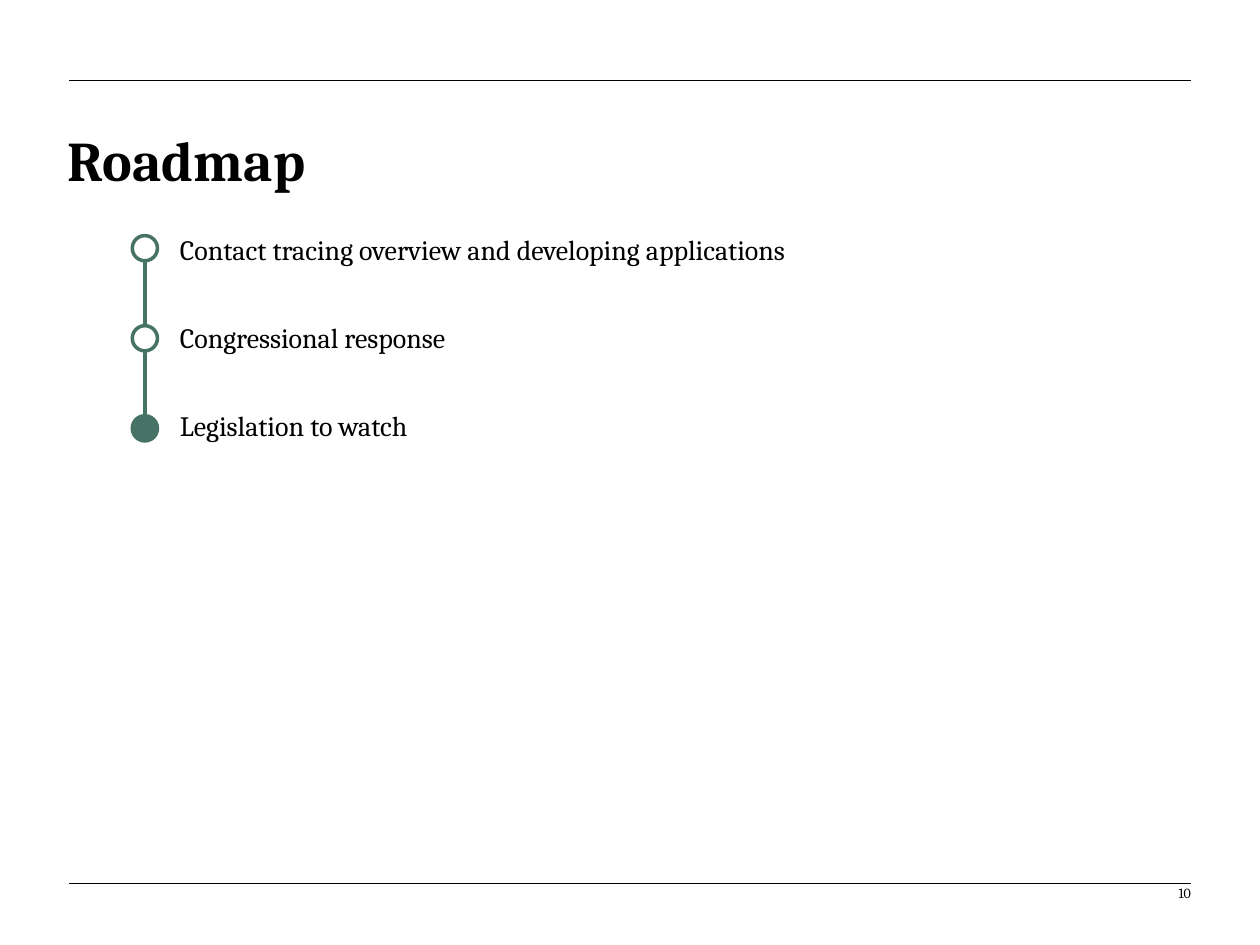
from lxml.etree import SubElement
from pptx import Presentation
from pptx.dml.color import RGBColor
from pptx.enum.shapes import MSO_CONNECTOR as CONNECTOR, MSO_SHAPE as SHAPE
from pptx.enum.text import MSO_ANCHOR as ANCHOR, PP_ALIGN as ALIGN
from pptx.oxml.ns import qn
from pptx.util import Inches, Pt

WIDTH, HEIGHT = 10, 7.5
MARGIN = 0.055 * WIDTH
BLACK = RGBColor(0x00, 0x00, 0x00)
WHITE = RGBColor(0xFF, 0xFF, 0xFF)
GREEN = RGBColor(0x47, 0x73, 0x67)
STOPS = [
    "Contact tracing overview and developing applications",
    "Congressional response",
    "Legislation to watch",
]
CURRENT = "Legislation to watch"


def add_line(slide, start, end, color, weight):
    points = [Inches(value) for value in (*start, *end)]
    line = slide.shapes.add_connector(CONNECTOR.STRAIGHT, *points)
    line.line.color.rgb = color
    line.line.width = Pt(weight)
    SubElement(line._element.spPr, qn("a:effectLst"))


def add_shape(slide, kind, box, fill):
    shape = slide.shapes.add_shape(kind, *[Inches(value) for value in box])
    shape.shadow.inherit = False
    shape.fill.solid()
    shape.fill.fore_color.rgb = fill
    return shape


def write(frame, lines, size, bold=False, align=ALIGN.LEFT, anchor=ANCHOR.TOP, gap=0):
    frame.word_wrap = True
    frame.vertical_anchor = anchor
    style = {"name": "Cambria", "size": Pt(size), "bold": bold}
    for index, line in enumerate(lines):
        paragraph = frame.paragraphs[0] if index == 0 else frame.add_paragraph()
        paragraph.text = line
        paragraph.alignment = align
        paragraph.space_after = Pt(gap)
        for key, value in style.items():
            setattr(paragraph.font, key, value)
        paragraph.font.color.rgb = BLACK


def add_label(slide, box, text, size, **layout):
    label = slide.shapes.add_textbox(*[Inches(value) for value in box])
    write(label.text_frame, [text], size, **layout)


def add_frame(slide, left, right, top, bottom, number):
    # Rules across the page, with the page number under the lower one
    for y in (bottom, top):
        add_line(slide, (left, y), (right, y), BLACK, 0.5)
    width = 2.49
    add_label(slide, (right + 0.1 - width, bottom - 0.12, width, 0.4), number, 8,
              align=ALIGN.RIGHT, anchor=ANCHOR.MIDDLE)


def add_roadmap(slide, left, top, width, height):
    dot, first, pitch = 0.2, top + 0.07, 0.715
    center = left + dot / 2
    last = first + pitch * (len(STOPS) - 1)

    # Track behind the stops
    add_line(slide, (center, last + dot), (center, first + dot), GREEN, 2.25)

    # Stop names
    text_left = left + 0.28
    names = add_shape(slide, SHAPE.RECTANGLE,
                      (text_left, top, left + width - text_left, height), WHITE)
    names.line.fill.background()
    write(names.text_frame, STOPS, 16, gap=31)

    # Stops, with the current one filled
    for index, stop in enumerate(STOPS):
        marker = add_shape(slide, SHAPE.OVAL, (left, first + index * pitch, dot, dot),
                           GREEN if stop == CURRENT else WHITE)
        marker.line.color.rgb = GREEN
        marker.line.width = Pt(2)


def main():
    deck = Presentation()
    deck.slide_width, deck.slide_height = Inches(WIDTH), Inches(HEIGHT)
    slide = deck.slides.add_slide(deck.slide_layouts[6])
    add_frame(slide, MARGIN, WIDTH - MARGIN, 0.64, 7.01, "10")
    add_roadmap(slide, 1.05, 1.8, 7.17, 1.78)
    add_label(slide, (0.44, 0.95, 8.93, 0.72), "Roadmap", 32, bold=True)
    deck.save("out.pptx")


if __name__ == "__main__":
    main()
